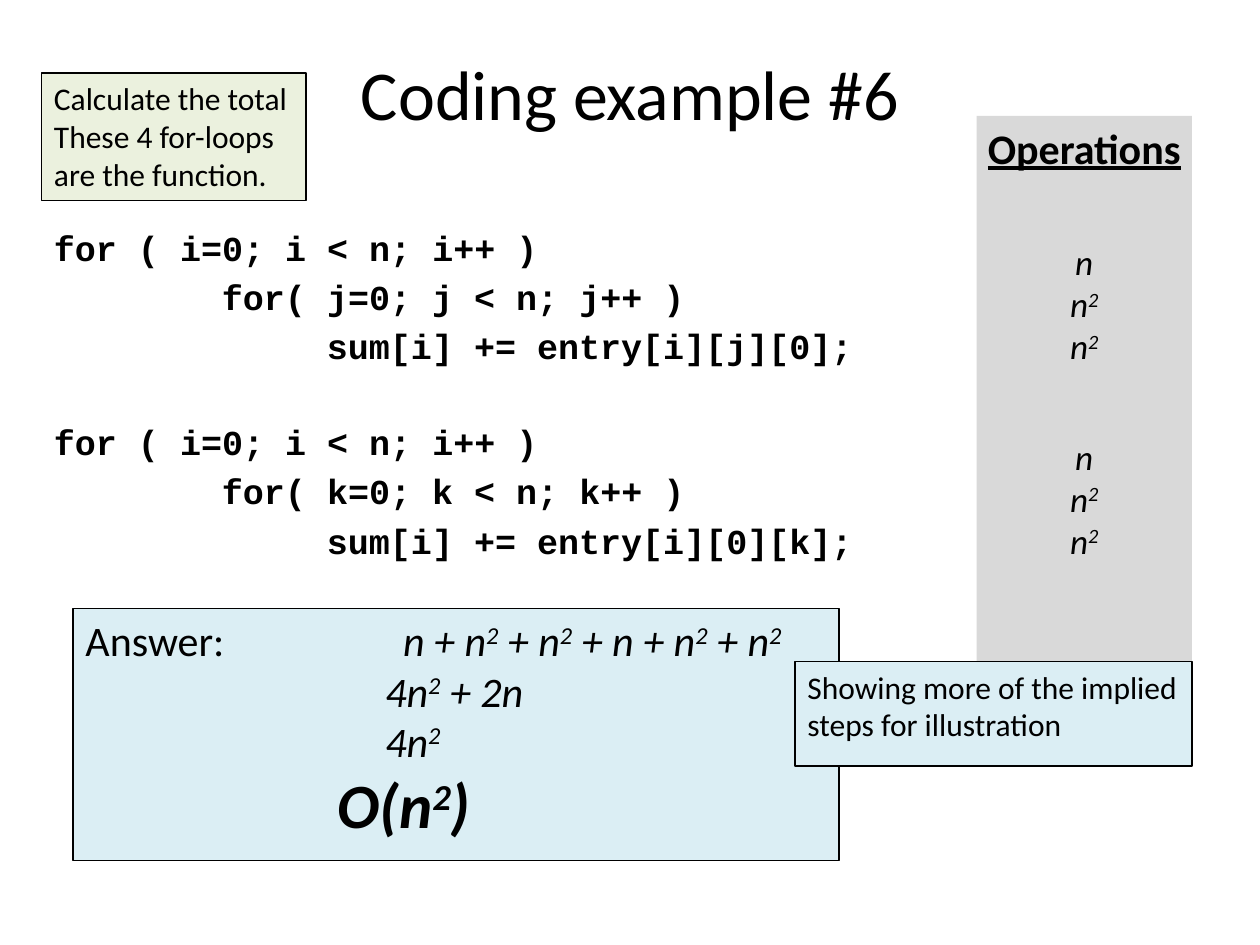
from pptx import Presentation
from pptx.dml.color import RGBColor
from pptx.enum.text import MSO_ANCHOR, PP_ALIGN
from pptx.util import Inches, Pt
from lxml import etree

DRAWING_NS = "{http://schemas.openxmlformats.org/drawingml/2006/main}"


def add_panel(left, top, width, height, fill=None, line=None, wrap=True):
    panel = slide.shapes.add_textbox(Inches(left), Inches(top), Inches(width), Inches(height))
    if fill:
        panel.fill.solid()
        panel.fill.fore_color.rgb = RGBColor.from_string(fill)
    if line:
        panel.line.color.rgb = RGBColor.from_string(line)
        panel.line.width = Pt(0.75)
    panel.text_frame.word_wrap = wrap
    return panel.text_frame


def write(paragraph, text, size, font="Calibri", bold=False, italic=False, underline=False):
    """Add text as runs; each ^2 becomes a superscript 2."""
    for index, piece in enumerate(text.split("^2")):
        for part, raised in (("2" if index else "", True), (piece, False)):
            if not part:
                continue
            run = paragraph.add_run()
            run.text = part
            run.font.name = font
            run.font.size = Pt(size)
            run.font.bold = bold
            run.font.italic = italic
            run.font.underline = underline
            run.font.color.rgb = RGBColor.from_string("000000")
            if raised:
                run._r.get_or_add_rPr().set("baseline", "30000")


presentation = Presentation()
presentation.slide_width = Inches(10)
presentation.slide_height = Inches(7.5)
slide = presentation.slides.add_slide(presentation.slide_layouts[6])

title = add_panel(0.5, 0.3, 9, 0.87)
title.vertical_anchor = MSO_ANCHOR.MIDDLE
title.paragraphs[0].alignment = PP_ALIGN.CENTER
write(title.paragraphs[0], "Coding example #6", 40)

# Code: indent in characters, space before in points
code = add_panel(0.33, 1.75, 6.67, 3)
code_lines = [
    (0, 4, "for ( i=0; i < n; i++ )"),
    (8, 4, "for( j=0; j < n; j++ )"),
    (13, 4, "sum[i] += entry[i][j][0];"),
    (0, 31, "for ( i=0; i < n; i++ )"),
    (8, 4, "for( k=0; k < n; k++ )"),
    (13, 4, "sum[i] += entry[i][0][k];"),
]
for number, (indent, space, text) in enumerate(code_lines):
    paragraph = code.add_paragraph() if number else code.paragraphs[0]
    paragraph.space_before = Pt(space)
    paragraph._p.get_or_add_pPr().set("marL", str(Inches(indent / 6)))
    write(paragraph, text, 20, font="Courier New", bold=True)

task = add_panel(0.33, 0.58, 2.1, 1.01, "EBF1DE", "000000", wrap=False)
for number, text in enumerate(["Calculate the total", "These 4 for-loops", "are the function."]):
    write(task.add_paragraph() if number else task.paragraphs[0], text, 18)

# Narrow side margins keep the heading on one line
operations = add_panel(7.75, 0.92, 1.71, 4.33, "D9D9D9")
operations.margin_left = operations.margin_right = Inches(0.02)
operations.paragraphs[0].alignment = PP_ALIGN.CENTER
write(operations.paragraphs[0], "Operations", 24, bold=True, underline=True)
for count in ["n", "n^2", "n^2"] * 2:
    paragraph = operations.add_paragraph()
    paragraph.alignment = PP_ALIGN.CENTER
    paragraph.space_before = Pt(39 if count == "n" else 0)
    write(paragraph, count, 20, italic=True)

answer = add_panel(0.58, 4.83, 6.08, 2, "DBEEF4", "000000")
total = answer.paragraphs[0]
tab_stops = etree.SubElement(total._p.get_or_add_pPr(), DRAWING_NS + "tabLst")
etree.SubElement(tab_stops, DRAWING_NS + "tab", pos=str(Inches(2.52)), algn="l")
write(total, "Answer:\t", 24)
write(total, "n + n^2 + n^2 + n + n^2 + n^2", 24, italic=True)
for indent, text, size in [(2.38, "4n^2 + 2n", 24), (2.38, "4n^2", 24), (2, "O(n^2)", 36)]:
    paragraph = answer.add_paragraph()
    paragraph._p.get_or_add_pPr().set("marL", str(Inches(indent)))
    write(paragraph, text, size, bold=size == 36, italic=True)

remark = add_panel(6.31, 5.25, 3.15, 0.83, "DBEEF4", "000000")
write(remark.paragraphs[0], "Showing more of the implied steps for illustration", 18)

presentation.save("out.pptx")
